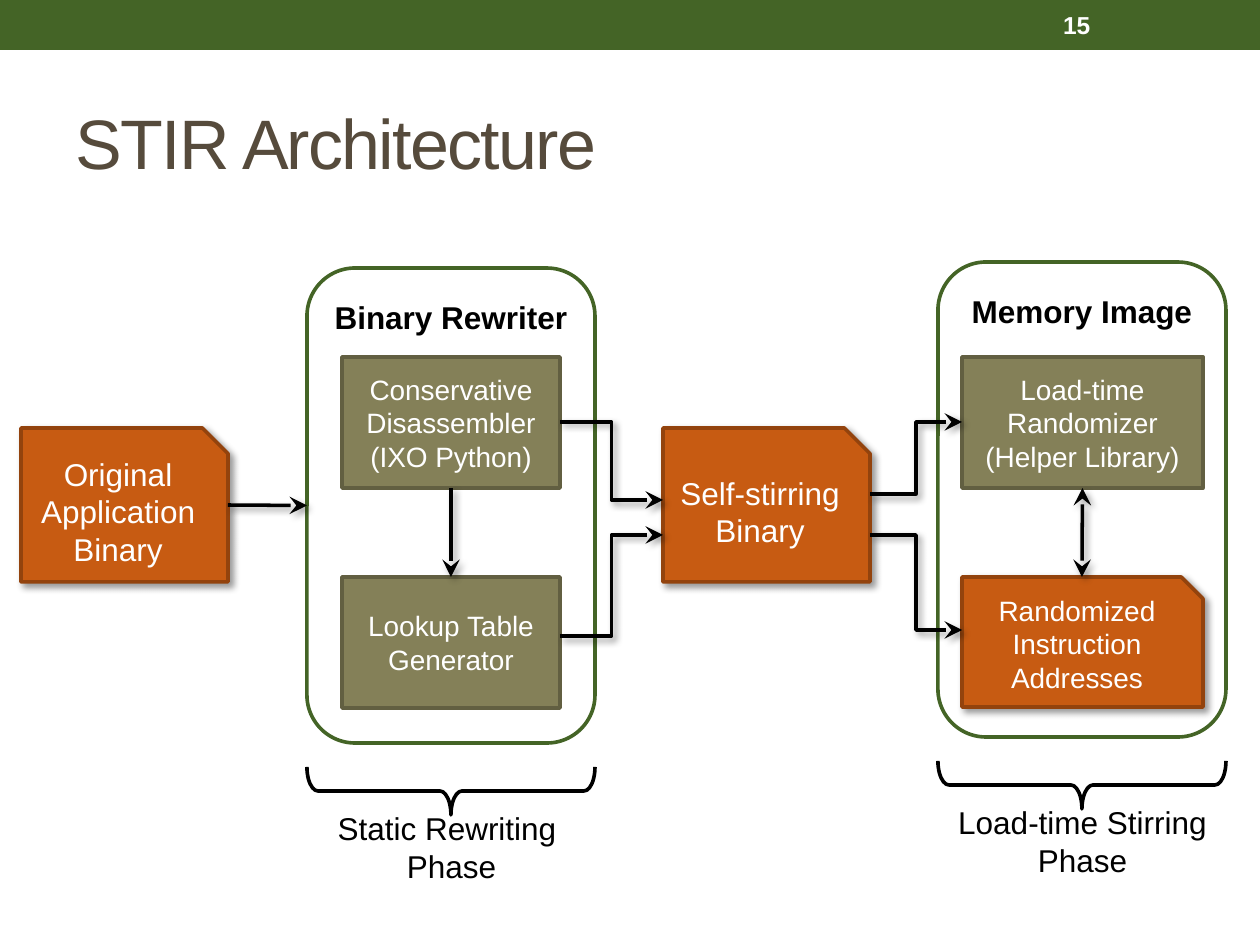
from dataclasses import dataclass
from lxml.etree import SubElement
from pptx import Presentation
from pptx.dml.color import RGBColor
from pptx.enum.shapes import MSO_CONNECTOR, MSO_SHAPE
from pptx.enum.text import MSO_ANCHOR, PP_ALIGN
from pptx.oxml.ns import qn
from pptx.util import Emu, Pt

PX_PER_INCH = 126


def px(length):
    return Emu(round(length * 914400 / PX_PER_INCH))


@dataclass(frozen=True)
class Theme:
    font: str = "Arial"
    green: str = "446426"
    title: str = "564B3C"
    orange: str = "C75B12"
    orange_edge: str = "93430D"
    olive: str = "848058"
    olive_edge: str = "625F41"
    black: str = "000000"
    white: str = "FFFFFF"
    title_size: int = 40
    body_size: int = 18
    step_size: int = 16
    number_size: int = 14
    edge: float = 2.08
    arrow: int = 2


def write(shape, text, size, color, font, bold=False, align=PP_ALIGN.CENTER,
          anchor=MSO_ANCHOR.MIDDLE, top=6, bottom=6, spacing=None):
    """Write one paragraph for each line of text."""
    frame = shape.text_frame
    frame.word_wrap = True
    frame.vertical_anchor = anchor
    frame.margin_left = frame.margin_right = px(13)
    frame.margin_top, frame.margin_bottom = px(top), px(bottom)
    for index, line in enumerate(text.split("\n")):
        paragraph = frame.add_paragraph() if index else frame.paragraphs[0]
        paragraph.alignment = align
        run = paragraph.add_run()
        run.text = line
        run.font.name, run.font.size, run.font.bold = font, Pt(size), bold
        run.font.color.rgb = RGBColor.from_string(color)
        if spacing is not None:
            run.font._element.set("spc", str(spacing))


def add_shadow(effects):
    shadow = SubElement(effects, qn("a:outerShdw"), blurRad=str(Pt(4)), dist=str(Pt(3)),
                        dir="2700000", algn="tl", rotWithShape="0")
    color = SubElement(shadow, qn("a:srgbClr"), val="000000")
    SubElement(color, qn("a:alpha"), val="40000")


class Diagram:
    def __init__(self, slide, theme):
        self.slide, self.theme = slide, theme

    def shape(self, kind, x, y, width, height, fill=None, edge=None, shadow=False):
        shape = self.slide.shapes.add_shape(kind, px(x), px(y), px(width), px(height))
        shape.shadow.inherit = False
        if fill:
            shape.fill.solid()
            shape.fill.fore_color.rgb = RGBColor.from_string(fill)
        else:
            shape.fill.background()
        if edge:
            shape.line.color.rgb = RGBColor.from_string(edge)
            shape.line.width = Pt(self.theme.edge)
        else:
            shape.line.fill.background()
        if shadow:
            add_shadow(shape._element.spPr.find(qn("a:effectLst")))
        return shape

    def text(self, text, x, y, width, height, size, color, **style):
        box = self.slide.shapes.add_textbox(px(x), px(y), px(width), px(height))
        write(box, text, size, color, self.theme.font, **style)

    def phase(self, heading, caption, x, y):
        """Rounded panel with a brace and the phase name below it."""
        theme, width, height, depth = self.theme, 288, 475, 48
        panel = self.shape(MSO_SHAPE.ROUNDED_RECTANGLE, x, y, width, height,
                           theme.white, theme.green)
        write(panel, heading, theme.body_size, theme.black, theme.font, bold=True,
              anchor=MSO_ANCHOR.TOP, top=16)
        brace = self.shape(MSO_SHAPE.LEFT_BRACE, x + (width - depth) / 2,
                           y + 523 - width / 2, depth, width, edge=theme.black)
        brace.rotation = 270
        brace.adjustments[0] = 0.23
        self.text(caption, x - 33, y + 535, 355, 101, theme.body_size, theme.black,
                  anchor=MSO_ANCHOR.TOP)
        return panel

    def step(self, text, x, y, width):
        theme = self.theme
        shape = self.shape(MSO_SHAPE.RECTANGLE, x, y, width, 131, theme.olive, theme.olive_edge)
        write(shape, text, theme.step_size, theme.white, theme.font)
        return shape

    def binary(self, text, x, y, width, height, size, bottom=6):
        theme = self.theme
        shape = self.shape(MSO_SHAPE.SNIP_1_RECTANGLE, x, y, width, height,
                           theme.orange, theme.orange_edge, shadow=True)
        write(shape, text, size, theme.white, theme.font, bottom=bottom)

    def arrow(self, start, end, kind=MSO_CONNECTOR.STRAIGHT, both=False,
              begin_join=None, end_join=None):
        line = self.slide.shapes.add_connector(kind, *map(px, start + end))
        if begin_join:
            line.begin_connect(*begin_join)
        if end_join:
            line.end_connect(*end_join)
        line.line.color.rgb = RGBColor.from_string(self.theme.black)
        line.line.width = Pt(self.theme.arrow)
        properties = line._element.spPr
        outline = properties.find(qn("a:ln"))
        for tag in ("a:headEnd", "a:tailEnd") if both else ("a:tailEnd",):
            SubElement(outline, qn(tag), type="stealth", w="lg", len="lg")
        add_shadow(SubElement(properties, qn("a:effectLst")))


def main():
    presentation = Presentation()
    presentation.slide_width, presentation.slide_height = px(1260), px(945)
    slide = presentation.slides.add_slide(presentation.slide_layouts[6])
    theme = Theme()
    diagram = Diagram(slide, theme)

    # Header band, page number and title
    diagram.shape(MSO_SHAPE.RECTANGLE, 0, 0, 1260, 50, theme.green)
    diagram.text("15", 1050, 2, 147, 45, theme.number_size, theme.white,
                 bold=True, align=PP_ALIGN.LEFT)
    diagram.text("STIR Architecture", 63, 73, 1134, 136, theme.title_size, theme.title,
                 align=PP_ALIGN.LEFT, spacing=-100)

    # Phases
    rewriter = diagram.phase("Binary Rewriter", "Static Rewriting \nPhase", 307, 268)
    diagram.phase("Memory Image", "Load-time Stirring Phase", 938, 262)

    # Steps and binaries
    upper, lower = 357, 577
    disassembler = diagram.step("Conservative Disassembler\n(IXO Python)", 342, upper, 218)
    generator = diagram.step("Lookup Table\nGenerator", 342, lower, 218)
    randomizer = diagram.step("Load-time Randomizer\n(Helper Library)", 962, upper, 241)
    diagram.binary("Randomized Instruction Addresses", 962, lower, 241, 130,
                   theme.step_size, bottom=14)
    for text, x in (("Original\nApplication\nBinary", 21), ("Self-stirring\nBinary", 663)):
        diagram.binary(text, x, 428, 207, 154, theme.body_size)

    # Straight arrows
    diagram.arrow((228, 505), (307, 505), end_join=(rewriter, 1))
    diagram.arrow((451, 488), (451, lower), begin_join=(disassembler, 2),
                  end_join=(generator, 0))
    diagram.arrow((1082, lower), (1082, 488), both=True, end_join=(randomizer, 2))

    # Elbow arrows into and out of the self-stirring binary
    for start, end in (((560, 422), (663, 500)), ((560, 636), (663, 535)),
                       ((870, 494), (962, 422)), ((870, 535), (962, 630))):
        diagram.arrow(start, end, MSO_CONNECTOR.ELBOW)

    presentation.save("out.pptx")


if __name__ == "__main__":
    main()
